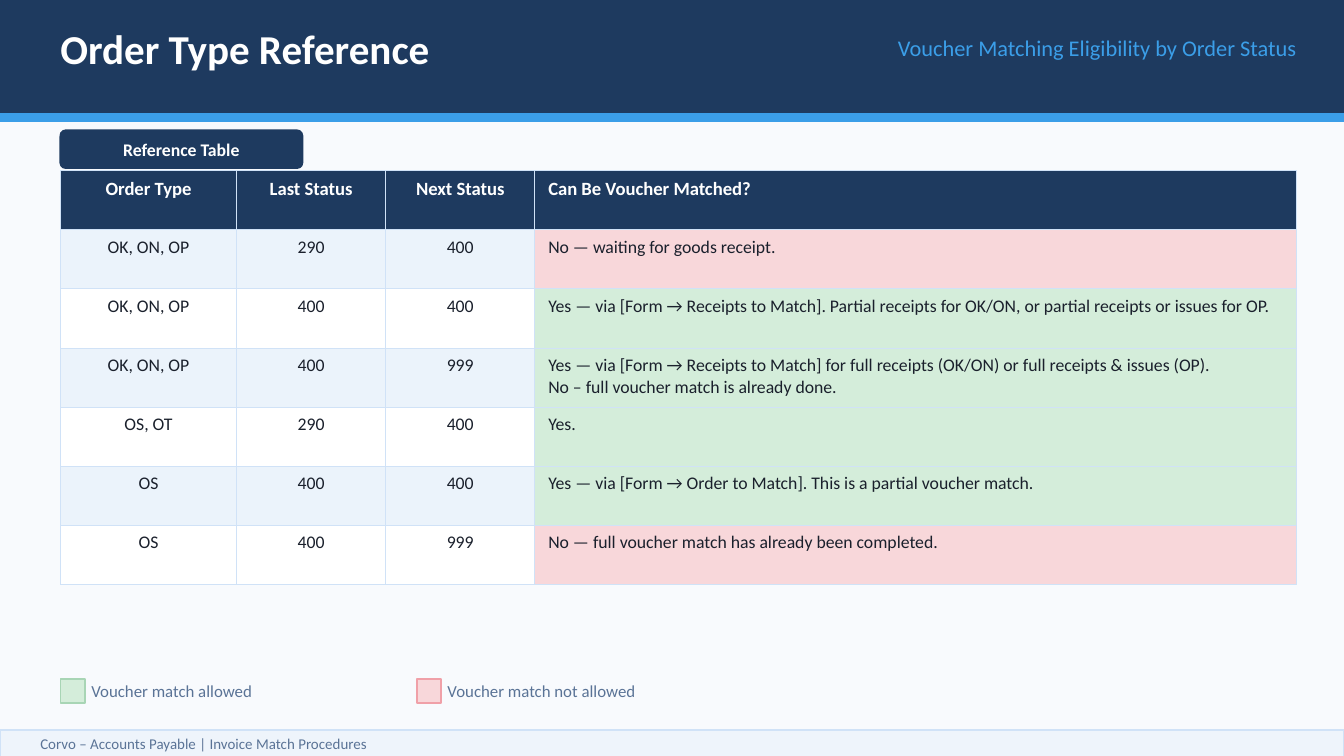
from lxml import etree
from pptx import Presentation
from pptx.dml.color import RGBColor
from pptx.enum.shapes import MSO_SHAPE
from pptx.enum.text import MSO_ANCHOR, PP_ALIGN
from pptx.oxml.ns import qn
from pptx.util import Inches, Pt

RECTANGLE = MSO_SHAPE.RECTANGLE
ROUNDED = MSO_SHAPE.ROUNDED_RECTANGLE
LEFT, CENTER, RIGHT = PP_ALIGN.LEFT, PP_ALIGN.CENTER, PP_ALIGN.RIGHT
MIDDLE = MSO_ANCHOR.MIDDLE

FONT = "Calibri"
PAGE_COLOR = RGBColor(0xF8, 0xFA, 0xFD)
NAVY = RGBColor(0x1E, 0x3A, 0x5F)
BLUE = RGBColor(0x3B, 0x9E, 0xE8)
WHITE = RGBColor(0xFF, 0xFF, 0xFF)
INK = RGBColor(0x1A, 0x20, 0x2C)
MUTED = RGBColor(0x5A, 0x73, 0x96)
FOOTER_FILL = RGBColor(0xEE, 0xF4, 0xFB)
BORDER = RGBColor(0xD0, 0xE2, 0xF7)
STRIPE = RGBColor(0xEB, 0xF3, 0xFB)
GREEN = RGBColor(0xD4, 0xED, 0xDA)
GREEN_LINE = RGBColor(0xA8, 0xD5, 0xB5)
RED = RGBColor(0xF8, 0xD7, 0xDA)
RED_LINE = RGBColor(0xF0, 0xA0, 0xA8)

MARGIN = 0.45
CONTENT_WIDTH = 9.2
COLUMN_WIDTHS = (1.31, 1.11, 1.11, 5.67)
ROW_HEIGHT = 0.44

HEADINGS = ("Order Type", "Last Status", "Next Status", "Can Be Voucher Matched?")
ORDERS = (
    ("OK, ON, OP", "290", "400", "No — waiting for goods receipt."),
    ("OK, ON, OP", "400", "400",
     "Yes — via [Form → Receipts to Match]. Partial receipts for OK/ON, "
     "or partial receipts or issues for OP."),
    ("OK, ON, OP", "400", "999",
     "Yes — via [Form → Receipts to Match] for full receipts (OK/ON) "
     "or full receipts & issues (OP).\nNo – full voucher match is already done."),
    ("OS, OT", "290", "400", "Yes."),
    ("OS", "400", "400",
     "Yes — via [Form → Order to Match]. This is a partial voucher match."),
    ("OS", "400", "999", "No — full voucher match has already been completed."),
)
LEGEND = (
    (0.45, 2.2, "Voucher match allowed", GREEN, GREEN_LINE),
    (3.1, 2.4, "Voucher match not allowed", RED, RED_LINE),
)


def write(frame, text, size, color, bold=False, align=LEFT):
    frame.text = text
    for para in frame.paragraphs:
        para.alignment = align
        for span in para.runs:
            span.font.name = FONT
            span.font.size = Pt(size)
            span.font.bold = bold
            span.font.color.rgb = color


def add_panel(page, place, fill, line, kind=RECTANGLE):
    panel = page.shapes.add_shape(kind, *map(Inches, place))
    panel.shadow.inherit = False
    panel.fill.solid()
    panel.fill.fore_color.rgb = fill
    panel.line.color.rgb = line
    panel.line.width = Pt(1)
    return panel


def add_label(page, place, text, size, color, bold=False, align=LEFT):
    """Add a text box without insets, centred vertically."""
    box = page.shapes.add_textbox(*map(Inches, place))
    frame = box.text_frame
    frame.word_wrap = True
    frame.vertical_anchor = MIDDLE
    frame.margin_left = frame.margin_right = 0
    frame.margin_top = frame.margin_bottom = 0
    write(frame, text, size, color, bold, align)


def add_borders(cell):
    properties = cell._tc.get_or_add_tcPr()
    for side in ("a:lnL", "a:lnR", "a:lnT", "a:lnB"):
        line = etree.SubElement(properties, qn(side), w=str(Pt(0.5)))
        fill = etree.SubElement(line, qn("a:solidFill"))
        etree.SubElement(fill, qn("a:srgbClr"), val=str(BORDER))


def fill_row(table, row, texts, fills, size, color, bold=False):
    for column, (text, fill) in enumerate(zip(texts, fills)):
        cell = table.cell(row, column)
        add_borders(cell)
        cell.fill.solid()
        cell.fill.fore_color.rgb = fill
        align = LEFT if column == len(texts) - 1 else CENTER
        write(cell.text_frame, text, size, color, bold, align)


def add_order_table(page):
    row_count = len(ORDERS) + 1
    place = (MARGIN, 1.27, CONTENT_WIDTH, ROW_HEIGHT * row_count)
    table = page.shapes.add_table(
        row_count, len(HEADINGS), *map(Inches, place)).table
    for column, width in zip(table.columns, COLUMN_WIDTHS):
        column.width = Inches(width)
    for row in table.rows:
        row.height = Inches(ROW_HEIGHT)
    fill_row(table, 0, HEADINGS, [NAVY] * 4, 10, WHITE, bold=True)
    for number, order in enumerate(ORDERS, 1):
        stripe = STRIPE if number % 2 else WHITE
        verdict = GREEN if order[-1].startswith("Yes") else RED
        fill_row(table, number, order, [stripe] * 3 + [verdict], 9.5, INK)


def add_header(page):
    add_panel(page, (0, 0, 10, 0.85), NAVY, NAVY)
    add_panel(page, (0, 0.85, 10, 0.05), BLUE, BLUE)
    add_label(page, (MARGIN, 0.08, 8.5, 0.55), "Order Type Reference",
              22, WHITE, bold=True)
    add_label(page, (MARGIN, 0.08, CONTENT_WIDTH, 0.55),
              "Voucher Matching Eligibility by Order Status", 12, BLUE, align=RIGHT)


def add_footer(page):
    add_panel(page, (0, 5.43, 10, 0.2), FOOTER_FILL, BORDER)
    add_label(page, (0.3, 5.43, 9.4, 0.2),
              "Corvo – Accounts Payable | Invoice Match Procedures", 8, MUTED)


def add_table_tag(page):
    place = (MARGIN, 0.97, 1.8, 0.28)
    tag = add_panel(page, place, NAVY, NAVY, ROUNDED)
    tag.adjustments[0] = 0.14
    add_label(page, place, "Reference Table", 9.5, WHITE, bold=True, align=CENTER)


def add_legend(page):
    for left, width, text, fill, line in LEGEND:
        add_panel(page, (left, 5.05, 0.18, 0.18), fill, line)
        add_label(page, (left + 0.23, 5.03, width, 0.22), text, 9, MUTED)


def main():
    deck = Presentation()
    deck.slide_width = Inches(10)
    deck.slide_height = deck.slide_width * 9 // 16
    page = deck.slides.add_slide(deck.slide_layouts[6])
    page.background.fill.solid()
    page.background.fill.fore_color.rgb = PAGE_COLOR
    add_header(page)
    add_footer(page)
    add_table_tag(page)
    add_order_table(page)
    add_legend(page)
    deck.save("out.pptx")


if __name__ == "__main__":
    main()
